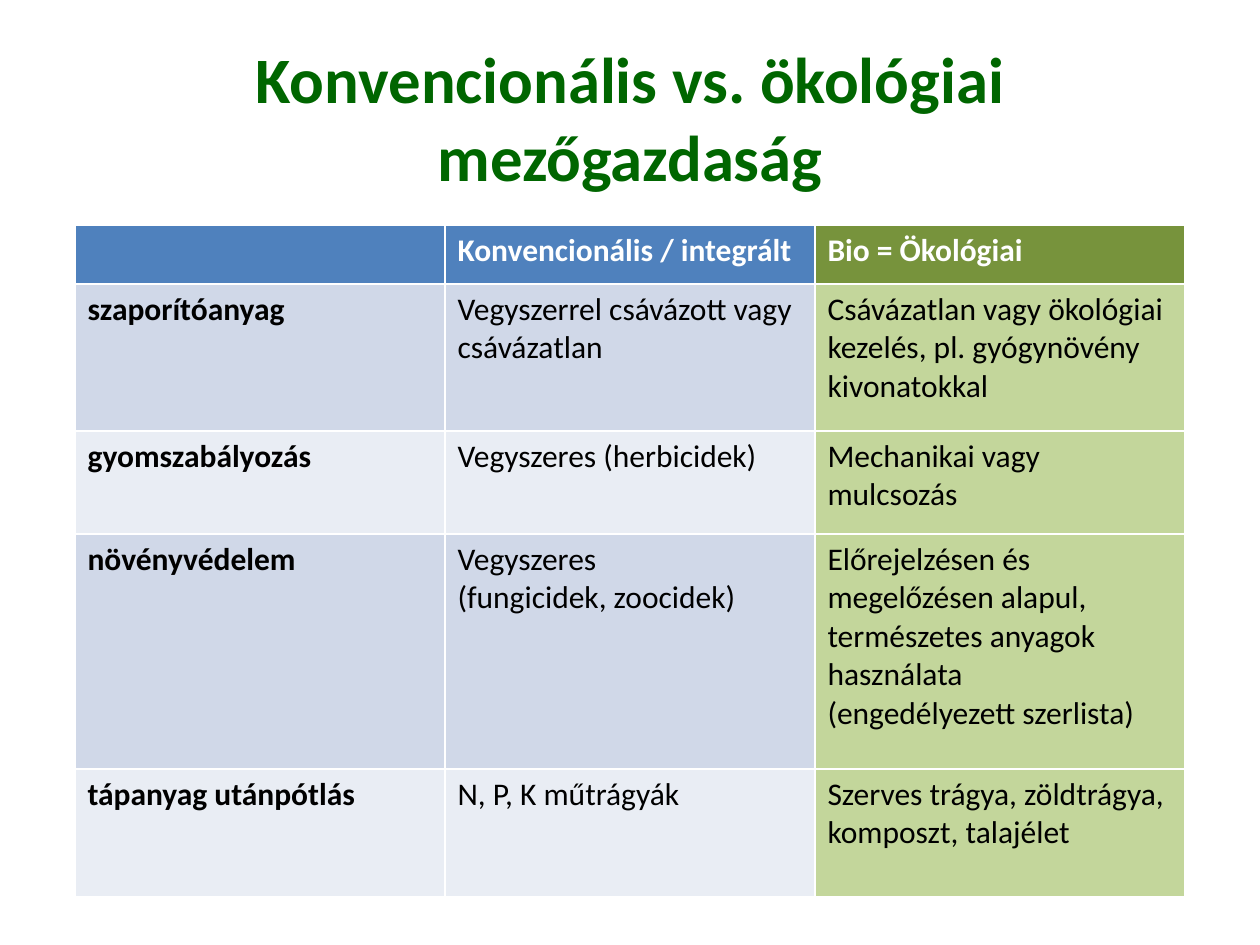
"""Build a slide comparing conventional and organic farming in a table."""
from pptx import Presentation
from pptx.dml.color import RGBColor
from pptx.enum.text import MSO_ANCHOR, MSO_AUTO_SIZE, PP_ALIGN
from pptx.util import Pt

PX = 914400 // 126
FONT = "Calibri"
COLORS = {
    "title": "006600", "header": "4F81BD", "organic_header": "77933C",
    "odd": "D0D8E8", "even": "E9EDF4", "organic": "C3D69B",
    "header_text": "FFFFFF", "text": "000000",
}
TITLE = "Konvencionális vs. ökológiai mezőgazdaság"
COMPARISON = [
    ("", "Konvencionális / integrált", "Bio = Ökológiai"),
    ("szaporítóanyag", "Vegyszerrel csávázott vagy csávázatlan",
     "Csávázatlan vagy ökológiai kezelés, pl. gyógynövény kivonatokkal"),
    ("gyomszabályozás", "Vegyszeres (herbicidek)", "Mechanikai vagy mulcsozás"),
    ("növényvédelem", "Vegyszeres\n(fungicidek, zoocidek)",
     "Előrejelzésen és megelőzésen alapul, természetes anyagok használata\n"
     "(engedélyezett szerlista)"),
    ("tápanyag utánpótlás", "N, P, K műtrágyák",
     "Szerves trágya, zöldtrágya, komposzt, talajélet"),
]
ROW_HEIGHTS = [59, 147, 103, 235, 128]
COLUMN_WIDTH = 370
TABLE_LEFT, TABLE_TOP = 75, 225


def color(name):
    return RGBColor.from_string(COLORS[name])


def format_text(frame, size, color_name, bold):
    for paragraph in frame.paragraphs:
        for run in paragraph.runs:
            run.font.name = FONT
            run.font.size = Pt(size)
            run.font.bold = bold
            run.font.color.rgb = color(color_name)


def fill_name(row, column):
    if row == 0:
        return "organic_header" if column == 2 else "header"
    if column == 2:
        return "organic"
    return "odd" if row % 2 else "even"


def add_title(slide):
    title = slide.shapes.title
    title.left, title.top, title.width, title.height = (
        n * PX for n in (63, 38, 1134, 157))
    frame = title.text_frame
    frame.text = TITLE
    frame.word_wrap = True
    frame.auto_size = MSO_AUTO_SIZE.NONE
    frame.vertical_anchor = MSO_ANCHOR.MIDDLE
    frame.paragraphs[0].alignment = PP_ALIGN.CENTER
    format_text(frame, 37, "title", True)


def add_comparison(slide):
    columns = len(COMPARISON[0])
    table = slide.shapes.add_table(
        len(COMPARISON), columns, TABLE_LEFT * PX, TABLE_TOP * PX,
        columns * COLUMN_WIDTH * PX, sum(ROW_HEIGHTS) * PX).table
    for column in table.columns:
        column.width = COLUMN_WIDTH * PX
    for r, (texts, height) in enumerate(zip(COMPARISON, ROW_HEIGHTS)):
        table.rows[r].height = height * PX
        for c, text in enumerate(texts):
            cell = table.cell(r, c)
            cell.fill.solid()
            cell.fill.fore_color.rgb = color(fill_name(r, c))
            cell.text_frame.text = text
            format_text(cell.text_frame, 18,
                        "text" if r else "header_text", r == 0 or c == 0)


def main():
    presentation = Presentation()
    presentation.slide_width, presentation.slide_height = 1260 * PX, 945 * PX
    slide = presentation.slides.add_slide(presentation.slide_layouts[5])
    add_comparison(slide)
    add_title(slide)
    presentation.save("out.pptx")


if __name__ == "__main__":
    main()
